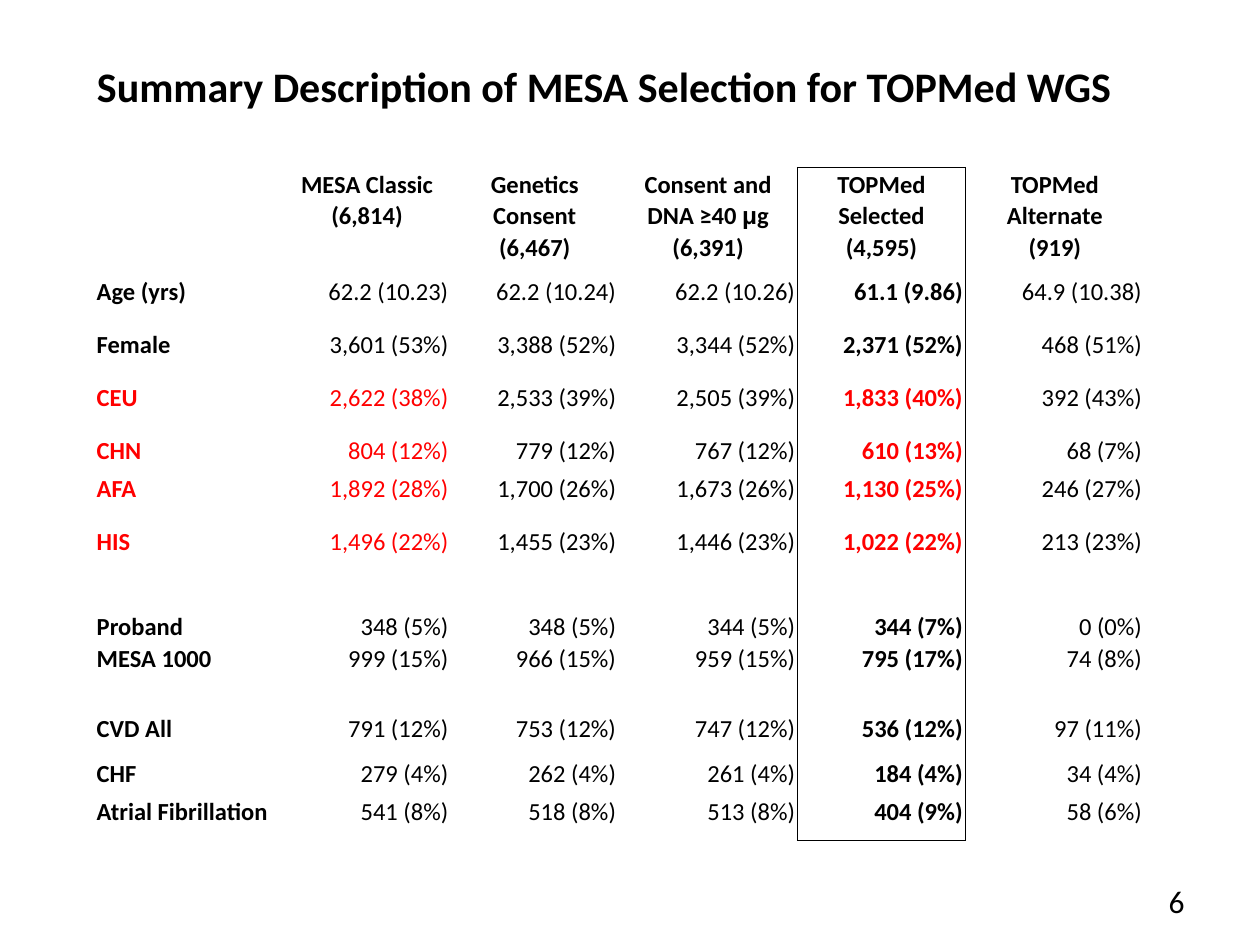
from dataclasses import dataclass

from lxml import etree
from pptx import Presentation
from pptx.dml import color
from pptx.enum import text
from pptx.oxml import ns
from pptx.util import Cm, Pt

BLACK = "000000"
RED = "FF0000"
FONT = "Calibri"
SELECTED = 4
RED_COLUMNS = (0, 1, SELECTED)
NO_GRID_STYLE = "{2D5ABB26-0587-4C30-8999-92F81FD0307C}"
COLUMN_WIDTHS = (3.81, 3.38, 3.38, 3.61, 3.38, 3.61)
HEADER_HEIGHT = 2.16


@dataclass
class Row:
    height: float
    values: tuple[str, ...] = ("",) * 6
    red: bool = False


HEADERS = (
    (),
    ("MESA Classic", "(6,814)"),
    ("Genetics Consent", "(6,467)"),
    ("Consent and DNA ≥40 μg", "(6,391)"),
    ("TOPMed Selected", "(4,595)"),
    ("TOPMed Alternate", "(919)"),
)

ROWS = (
    Row(1.07, ("Age (yrs)", "62.2 (10.23)", "62.2 (10.24)", "62.2 (10.26)", "61.1 (9.86)", "64.9 (10.38)")),
    Row(1.07, ("Female", "3,601 (53%)", "3,388 (52%)", "3,344 (52%)", "2,371 (52%)", "468 (51%)")),
    Row(1.07, ("CEU", "2,622 (38%)", "2,533 (39%)", "2,505 (39%)", "1,833 (40%)", "392 (43%)"), True),
    Row(0.76, ("CHN", "804 (12%)", "779 (12%)", "767 (12%)", "610 (13%)", "68 (7%)"), True),
    Row(1.07, ("AFA", "1,892 (28%)", "1,700 (26%)", "1,673 (26%)", "1,130 (25%)", "246 (27%)"), True),
    Row(1.07, ("HIS", "1,496 (22%)", "1,455 (23%)", "1,446 (23%)", "1,022 (22%)", "213 (23%)"), True),
    Row(0.65),
    Row(0.65, ("Proband", "348 (5%)", "348 (5%)", "344 (5%)", "344 (7%)", "0 (0%)")),
    Row(0.76, ("MESA 1000", "999 (15%)", "966 (15%)", "959 (15%)", "795 (17%)", "74 (8%)")),
    Row(0.65),
    Row(0.91, ("CVD All", "791 (12%)", "753 (12%)", "747 (12%)", "536 (12%)", "97 (11%)")),
    Row(0.76, ("CHF", "279 (4%)", "262 (4%)", "261 (4%)", "184 (4%)", "34 (4%)")),
    Row(0.91, ("Atrial Fibrillation", "541 (8%)", "518 (8%)", "513 (8%)", "404 (9%)", "58 (6%)")),
)


def rgb(value: str) -> color.RGBColor:
    return color.RGBColor.from_string(value)


def format_paragraph(paragraph, size: float, bold: bool, alignment, fill: str = BLACK) -> None:
    paragraph.alignment = alignment
    font = paragraph.font
    font.name = FONT
    font.size = Pt(size)
    font.bold = bold
    font.color.rgb = rgb(fill)


def add_line(paragraph, line: str) -> None:
    before, symbol, after = line.partition("μ")
    for part in filter(None, (before, symbol, after)):
        run = paragraph.add_run()
        run.text = part
        if part == "μ":
            run.font.name = "Arial"


def add_border(cell, side: str) -> None:
    properties = cell._tc.get_or_add_tcPr()
    line = etree.SubElement(properties, ns.qn(f"a:ln{side}"), w=str(Pt(1)))
    fill = etree.SubElement(line, ns.qn("a:solidFill"))
    etree.SubElement(fill, ns.qn("a:srgbClr"), val=BLACK)


def border_sides(row: int, column: int) -> str:
    if column == SELECTED:
        return "LR" + ("T" if row == 0 else "") + ("B" if row == len(ROWS) else "")
    return {SELECTED - 1: "R", SELECTED + 1: "L"}.get(column, "")


def fill_cell(cell, lines: tuple[str, ...], bold: bool, alignment, fill: str) -> None:
    cell.margin_left = cell.margin_right = Cm(0.05)
    cell.margin_top = cell.margin_bottom = 0
    cell.vertical_anchor = text.MSO_ANCHOR.TOP
    cell.fill.background()
    frame = cell.text_frame
    for index, line in enumerate(lines or ("",)):
        paragraph = frame.add_paragraph() if index else frame.paragraphs[0]
        add_line(paragraph, line)
        paragraph.line_spacing = 1.07
        format_paragraph(paragraph, 14 if line else 12, bold, alignment, fill)


def add_title(slide) -> None:
    title = slide.shapes.title
    title.left, title.top, title.width, title.height = Cm(1.7), Cm(1.1), Cm(21.23), Cm(1.27)
    frame = title.text_frame
    frame.text = "Summary Description of MESA Selection for TOPMed WGS"
    frame.word_wrap = True
    frame.auto_size = text.MSO_AUTO_SIZE.NONE
    frame.vertical_anchor = text.MSO_ANCHOR.TOP
    format_paragraph(frame.paragraphs[0], 24, True, text.PP_ALIGN.LEFT)


def add_summary_table(slide) -> None:
    heights = [HEADER_HEIGHT] + [row.height for row in ROWS]
    table = slide.shapes.add_table(
        len(heights), len(COLUMN_WIDTHS), Cm(1.9), Cm(3.38),
        Cm(sum(COLUMN_WIDTHS)), Cm(sum(heights)),
    ).table
    table.first_row = table.horz_banding = False
    table._tbl.tblPr.find(ns.qn("a:tableStyleId")).text = NO_GRID_STYLE
    for column, width in zip(table.columns, COLUMN_WIDTHS):
        column.width = Cm(width)
    for index, height in enumerate(heights):
        table.rows[index].height = Cm(height)
        for column in range(len(COLUMN_WIDTHS)):
            cell = table.cell(index, column)
            for side in border_sides(index, column):
                add_border(cell, side)
            if index == 0:
                fill_cell(cell, HEADERS[column], True, text.PP_ALIGN.CENTER, BLACK)
                continue
            row = ROWS[index - 1]
            alignment = text.PP_ALIGN.RIGHT if column else text.PP_ALIGN.LEFT
            fill = RED if row.red and column in RED_COLUMNS else BLACK
            fill_cell(cell, (row.values[column],), column in (0, SELECTED), alignment, fill)


def add_page_number(slide) -> None:
    frame = slide.shapes.add_textbox(Cm(18.21), Cm(17.65), Cm(5.92), Cm(1.02)).text_frame
    frame.word_wrap = True
    frame.text = "6"
    format_paragraph(frame.paragraphs[0], 18, False, text.PP_ALIGN.RIGHT)


def main() -> None:
    presentation = Presentation()
    presentation.slide_width, presentation.slide_height = Cm(25.4), Cm(19.05)
    slide = presentation.slides.add_slide(presentation.slide_layouts[5])
    add_summary_table(slide)
    add_title(slide)
    add_page_number(slide)
    presentation.save("out.pptx")


if __name__ == "__main__":
    main()
